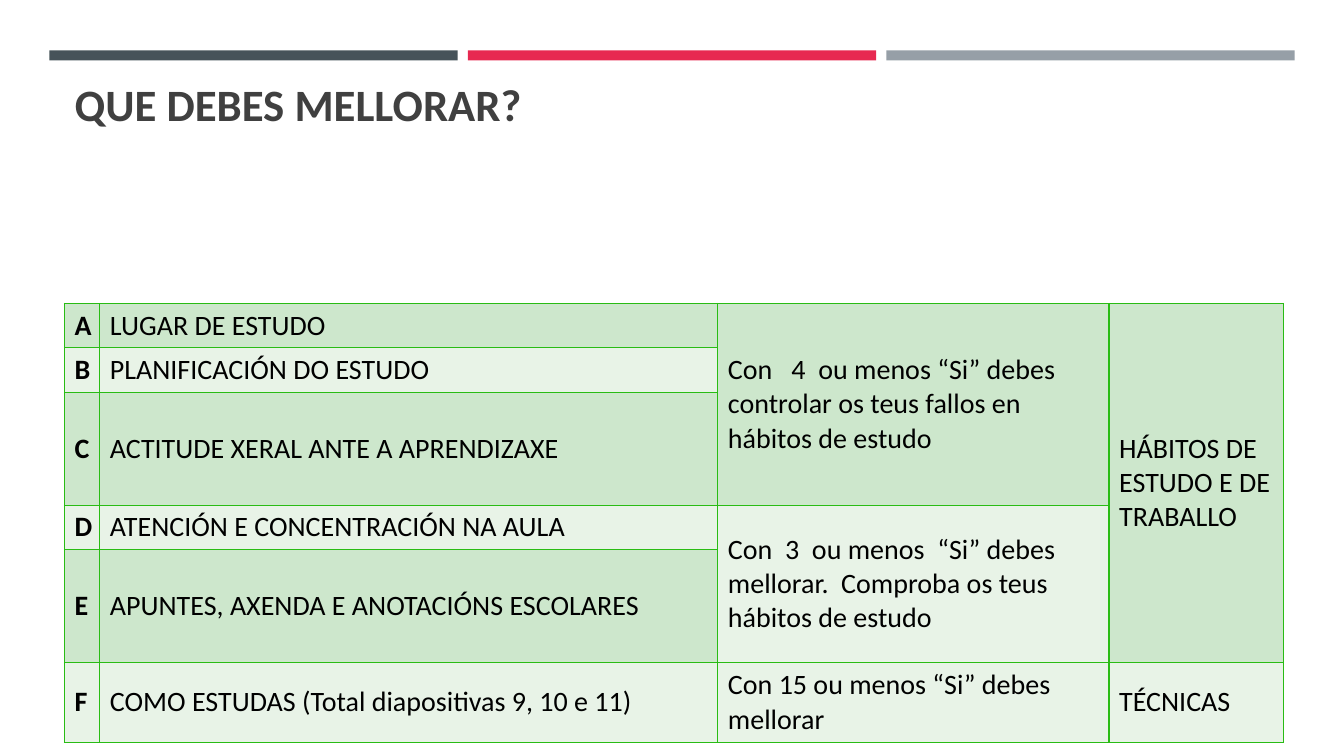
"""Build the study habits review slide."""
from dataclasses import dataclass

from lxml.etree import SubElement
from pptx import Presentation
from pptx.dml.color import RGBColor
from pptx.enum.shapes import MSO_SHAPE
from pptx.enum.text import MSO_ANCHOR, MSO_AUTO_SIZE, PP_ALIGN
from pptx.oxml.ns import qn
from pptx.slide import Slide
from pptx.table import Table, _Cell
from pptx.text.text import TextFrame
from pptx.util import Inches, Pt


@dataclass(frozen=True)
class Theme:
    """Colours and type sizes of the slide."""
    font: str = "Calibri"
    title: str = "404040"
    text: str = "000000"
    edge: str = "29BC14"
    bands: tuple[str, str] = ("CDE7CC", "E8F3E7")
    bars: tuple[str, ...] = ("465359", "E72951", "969FA7")
    head: int = 32
    body: int = 20
    line: int = 1


@dataclass(frozen=True)
class Entry:
    """Table text with its place and the number of rows it covers."""
    row: int
    col: int
    text: str
    span: int = 1


THEME = Theme()
WIDTHS = (0.35, 6.13, 3.88, 1.73)
HEIGHTS = (0.44, 0.44, 1.12, 0.44, 1.12, 0.79)
TOPICS = (
    "LUGAR DE ESTUDO",
    "PLANIFICACIÓN DO ESTUDO",
    "ACTITUDE XERAL ANTE A APRENDIZAXE",
    "ATENCIÓN E CONCENTRACIÓN NA AULA",
    "APUNTES, AXENDA E ANOTACIÓNS ESCOLARES",
    "COMO ESTUDAS (Total diapositivas 9, 10 e 11)",
)
ADVICE = (
    Entry(0, 2, "Con   4  ou menos “Si” debes controlar os teus fallos en hábitos de estudo", 3),
    Entry(3, 2, "Con  3  ou menos  “Si” debes mellorar.  Comproba os teus hábitos de estudo", 2),
    Entry(5, 2, "Con 15 ou menos “Si” debes mellorar"),
    Entry(0, 3, "HÁBITOS DE ESTUDO E DE TRABALLO", 5),
    Entry(5, 3, "TÉCNICAS"),
)


def write(frame: TextFrame, text: str, size: int, tint: str, bold: bool) -> None:
    """Set the text of a frame and format it."""
    frame.text = text
    para = frame.paragraphs[0]
    para.alignment = PP_ALIGN.LEFT
    font = para.runs[0].font
    font.name, font.size, font.bold = THEME.font, Pt(size), bold
    font.color.rgb = RGBColor.from_string(tint)


def add_bars(slide: Slide) -> None:
    """Draw the row of coloured bars along the top."""
    for i, tint in enumerate(THEME.bars):
        bar = slide.shapes.add_shape(
            MSO_SHAPE.RECTANGLE, Inches(0.49 + 4.15 * i), Inches(0.5), Inches(4.05), Inches(0.1))
        bar.shadow.inherit = False
        bar.fill.solid()
        bar.fill.fore_color.rgb = RGBColor.from_string(tint)
        bar.line.fill.background()


def add_title(slide: Slide) -> None:
    """Place and fill the title."""
    title = slide.shapes.title
    title.left, title.top = Inches(0.64), Inches(0.77)
    title.width, title.height = Inches(12.06), Inches(0.57)
    frame = title.text_frame
    frame.auto_size = MSO_AUTO_SIZE.NONE
    frame.vertical_anchor = MSO_ANCHOR.BOTTOM
    write(frame, "QUE DEBES MELLORAR?", THEME.head, THEME.title, True)


def style(cell: _Cell, tint: str) -> None:
    """Give a cell its borders, fill and anchor."""
    props = cell._tc.get_or_add_tcPr()
    for side in ("a:lnL", "a:lnR", "a:lnT", "a:lnB"):
        line = SubElement(props, qn(side), w=str(Pt(THEME.line)))
        fill = SubElement(line, qn("a:solidFill"))
        SubElement(fill, qn("a:srgbClr"), val=THEME.edge)
    cell.fill.solid()
    cell.fill.fore_color.rgb = RGBColor.from_string(tint)
    cell.vertical_anchor = MSO_ANCHOR.MIDDLE


def put(table: Table, entry: Entry) -> None:
    """Write an entry, merging the rows it covers."""
    cell = table.cell(entry.row, entry.col)
    if entry.span > 1:
        cell.merge(table.cell(entry.row + entry.span - 1, entry.col))
    write(cell.text_frame, entry.text, THEME.body, THEME.text, entry.col == 0)


def add_grid(slide: Slide) -> None:
    """Build the table of topics and advice."""
    table = slide.shapes.add_table(
        len(HEIGHTS), len(WIDTHS), Inches(0.64), Inches(3.01),
        Inches(sum(WIDTHS)), Inches(sum(HEIGHTS))).table
    table.first_row = table.horz_banding = False
    for col, width in zip(table.columns, WIDTHS):
        col.width = Inches(width)
    for i, (row, height) in enumerate(zip(table.rows, HEIGHTS)):
        row.height = Inches(height)
        for cell in row.cells:
            style(cell, THEME.bands[i % 2])
    for i, (mark, topic) in enumerate(zip("ABCDEF", TOPICS)):
        put(table, Entry(i, 0, mark))
        put(table, Entry(i, 1, topic))
    for entry in ADVICE:
        put(table, entry)


def main() -> None:
    """Assemble and save the deck."""
    deck = Presentation()
    deck.slide_width, deck.slide_height = Inches(13.33), Inches(7.5)
    slide = deck.slides.add_slide(deck.slide_layouts[5])
    add_bars(slide)
    add_title(slide)
    add_grid(slide)
    deck.save("out.pptx")


if __name__ == "__main__":
    main()
